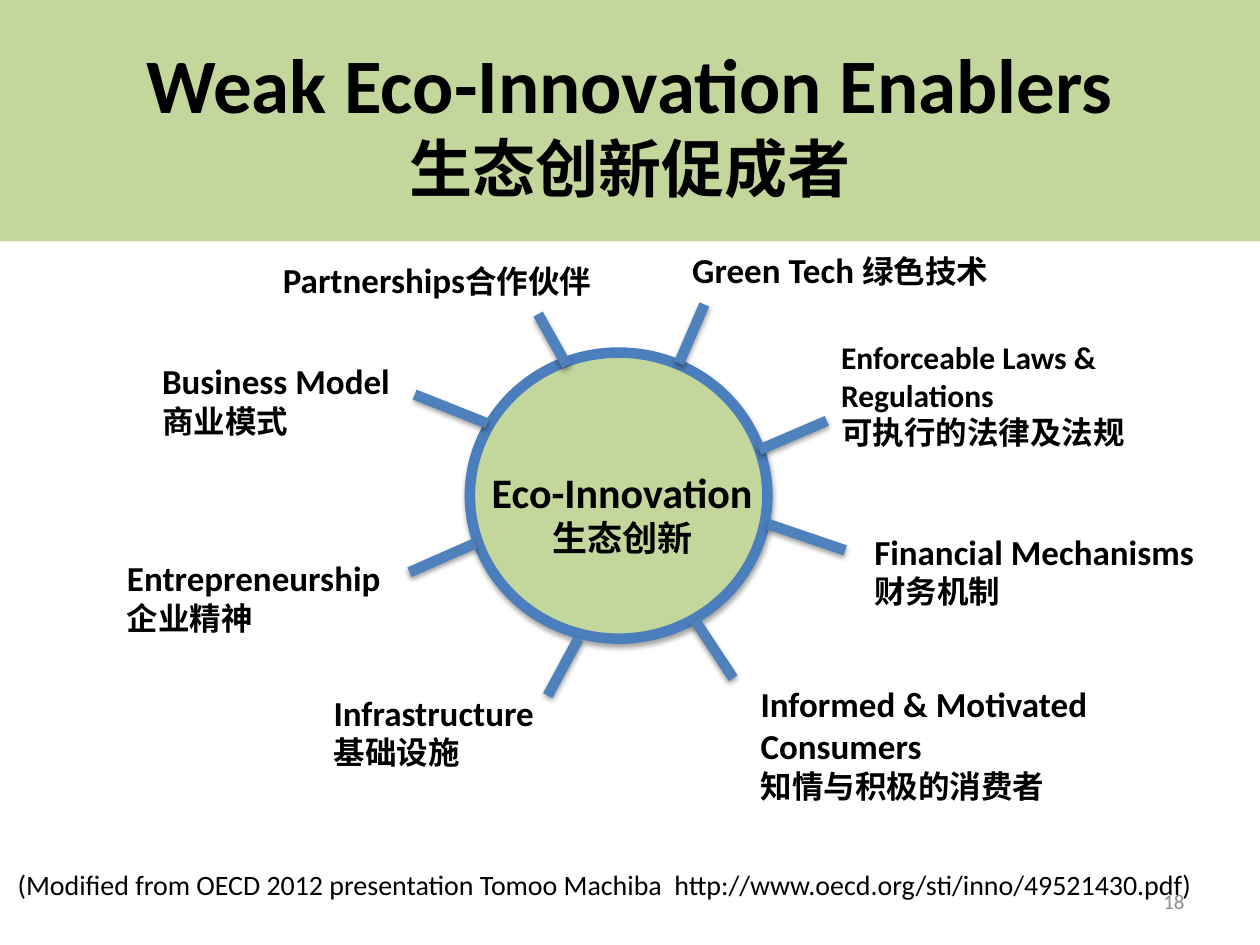
import pptx
import pptx.util
import pptx.oxml
import pptx.oxml.ns
import pptx.dml.color
import pptx.enum.shapes
import pptx.enum.text

Pt = pptx.util.Pt
RGB = pptx.dml.color.RGBColor
ALIGN = pptx.enum.text.PP_ALIGN
FIT = pptx.enum.text.MSO_AUTO_SIZE
MIDDLE = pptx.enum.text.MSO_ANCHOR.MIDDLE

GREEN = RGB(0xC3, 0xD6, 0x9B)
RIM = RGB(0x4B, 0x7E, 0xBC)
BLUE = RGB(0x4F, 0x81, 0xBD)
BLACK = RGB(0, 0, 0)
GREY = RGB(0x8C, 0x8C, 0x8C)

SPOKES = [
    (330.5, 365, 313, 397.5),
    (271.5, 310.5, 234, 327),
    (278.5, 242, 237, 225.5),
    (324, 209, 307.5, 179.5),
    (402.5, 174, 388, 207.5),
    (472.5, 240.5, 434, 257),
    (483, 314.5, 439, 299.5),
    (397.5, 355, 419, 387.5),
]

LABELS = [
    ((183.5, 391.5, 140.5, 53.5), [[("Infrastructure", 20)], [("基础设施", 18)]]),
    ((65.5, 314.5, 165.5, 53.5), [[("Entrepreneurship", 20)], [("企业精神", 18)]]),
    ((85.5, 202, 146, 53.5), [[("Business Model", 20)], [("商业模式", 18)]]),
    ((154.5, 144, 206, 31.5), [[("Partnerships", 20), ("合作伙伴", 18)]]),
    ((388.5, 138.5, 205, 31.5), [[("Green Tech ", 20), ("绿色技术", 18)]]),
    ((473.5, 189.5, 219.5, 72.5),
     [[("Enforceable Laws & Regulations", 18)], [("可执行的法律及法规", 18)]]),
    ((492.5, 299.5, 201, 53.5), [[("Financial Mechanisms", 20)], [("财务机制", 18)]]),
    ((427.5, 386.5, 222.5, 80),
     [[("Informed & Motivated Consumers", 20)], [("知情与积极的消费者", 18)]]),
]


class Deck:
    """Holds the style and the current slide, and draws each kind of element."""

    def __init__(self):
        self.font = "Calibri"
        self.prs = pptx.Presentation()
        self.prs.slide_width, self.prs.slide_height = Pt(720), Pt(540)
        self.slide = self.prs.slides.add_slide(self.prs.slide_layouts[5])

    def style(self, run, size, color=BLACK, bold=True):
        run.font.name = self.font
        run.font.size = Pt(size)
        run.font.bold = bold
        run.font.color.rgb = color

    def shade(self, shape, alpha, dist):
        shape.element.spPr.append(pptx.oxml.parse_xml(
            f'<a:effectLst {pptx.oxml.ns.nsdecls("a")}>'
            f'<a:outerShdw blurRad="{Pt(3.1)}" dist="{Pt(dist)}" dir="5400000" rotWithShape="0">'
            f'<a:srgbClr val="000000"><a:alpha val="{alpha * 1000}"/></a:srgbClr>'
            '</a:outerShdw></a:effectLst>'))

    def title(self, area, text, sizes):
        shape = self.slide.shapes.title
        shape.left, shape.top, shape.width, shape.height = map(Pt, area)
        shape.fill.solid()
        shape.fill.fore_color.rgb = GREEN
        frame = shape.text_frame
        frame.text = text
        frame.auto_size = FIT.NONE
        frame.vertical_anchor = MIDDLE
        para = frame.paragraphs[0]
        para.alignment = ALIGN.CENTER
        for run, size in zip(para.runs, sizes):
            self.style(run, size)

    def disc(self, area):
        shape = self.slide.shapes.add_shape(
            pptx.enum.shapes.MSO_SHAPE.OVAL, *map(Pt, area))
        shape.fill.solid()
        shape.fill.fore_color.rgb = GREEN
        shape.line.color.rgb = RIM
        shape.line.width = Pt(6)
        self.shade(shape, 35, 1.8)

    def spoke(self, ends):
        line = self.slide.shapes.add_connector(
            pptx.enum.shapes.MSO_CONNECTOR.STRAIGHT, *map(Pt, ends))
        line.line.color.rgb = BLUE
        line.line.width = Pt(6)
        self.shade(line, 38, 1.6)

    def text(self, area, rows, align=ALIGN.LEFT, color=BLACK, bold=True):
        frame = self.slide.shapes.add_textbox(*map(Pt, area)).text_frame
        frame.word_wrap = True
        frame.auto_size = FIT.SHAPE_TO_FIT_TEXT
        for i, row in enumerate(rows):
            para = frame.add_paragraph() if i else frame.paragraphs[0]
            para.alignment = align
            for words, size in row:
                run = para.add_run()
                run.text = words
                self.style(run, size, color, bold)
        return frame


def main():
    deck = Deck()
    deck.title((0, 0, 720, 138), "Weak Eco-Innovation Enablers\v生态创新促成者", (44, 36))
    page = deck.text((516, 500.5, 168, 29), [[("18", 12)]], ALIGN.RIGHT, GREY, False)
    page.auto_size = FIT.NONE
    page.vertical_anchor = MIDDLE
    deck.disc((268.5, 201.5, 170, 163.5))
    for ends in SPOKES:
        deck.spoke(ends)
    for area, rows in LABELS:
        deck.text(area, rows)
    deck.text((271.5, 263, 168, 60.5),
              [[("Eco-Innovation", 24)], [("生态创新", 20)]], ALIGN.CENTER)
    source = ("(Modified from OECD 2012 presentation Tomoo Machiba  "
              "http://www.oecd.org/sti/inno/49521430.pdf)")
    deck.text((3, 492, 723.5, 26.5), [[(source, 16)]], bold=False)
    deck.prs.save("out.pptx")


if __name__ == "__main__":
    main()
